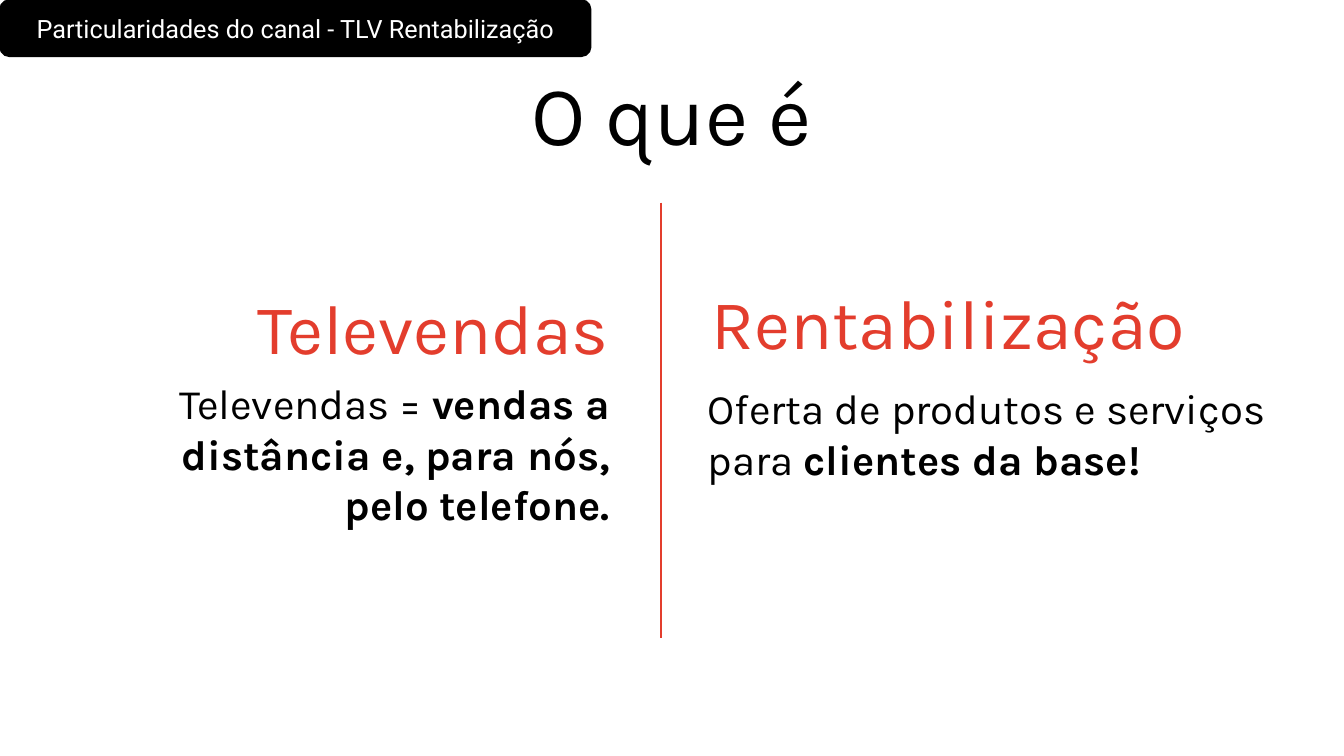
from lxml.etree import SubElement
from pptx import Presentation
from pptx.dml.color import RGBColor
from pptx.enum.shapes import MSO_CONNECTOR as Connector, MSO_SHAPE as Shape
from pptx.enum.text import MSO_ANCHOR as Anchor, MSO_AUTO_SIZE as AutoSize, PP_ALIGN as Align
from pptx.oxml.ns import qn
from pptx.util import Inches, Pt

WIDTH, HEIGHT = 13.33, 7.5
BLACK, WHITE, RED = "000000", "FFFFFF", "E33D2D"
TAG = "Particularidades do canal - TLV Rentabilização"
TITLE = "O que é"
DIVIDER = {"x": 6.56, "top": 2.01, "bottom": 6.33}
COLUMNS = [
    {"align": Align.RIGHT,
     "heading": ("Televendas", (0.95, 2.77, 5.19, 0.94)),
     "body": ([("Televendas = ", False),
               ("vendas a distância e, para nós, pelo telefone.", True)],
              (1.32, 3.7, 4.83, 1.62))},
    {"align": Align.LEFT,
     "heading": ("Rentabilização", (6.96, 2.72, 5.21, 0.94)),
     "body": ([("Oferta de produtos e serviços para ", False),
               ("clientes da base!", True)],
              (6.92, 3.75, 5.89, 1.11))},
]


def color(value):
    return RGBColor.from_string(value)


def write(shape, spans, size, tint, align, anchor=Anchor.TOP, font="Karla"):
    frame = shape.text_frame
    frame.word_wrap = True
    frame.auto_size = AutoSize.NONE
    frame.vertical_anchor = anchor
    para = frame.paragraphs[0]
    para.alignment = align
    for text, bold in spans:
        span = para.add_run()
        span.text = text
        span.font.name = font
        span.font.size = Pt(size)
        span.font.bold = bold
        span.font.color.rgb = color(tint)


def add_text(page, area, spans, size, tint, align):
    box = page.shapes.add_textbox(*map(Inches, area))
    write(box, spans, size, tint, align)


def add_title(page):
    title = page.shapes.title
    width = 5.21
    title.left, title.top = Inches((WIDTH - width) / 2), Inches(0.56)
    title.width, title.height = Inches(width), Inches(1.11)
    write(title, [(TITLE, False)], 60, BLACK, Align.CENTER)


def add_divider(page):
    x = Inches(DIVIDER["x"])
    line = page.shapes.add_connector(
        Connector.STRAIGHT, x, Inches(DIVIDER["top"]), x, Inches(DIVIDER["bottom"]))
    line.line.color.rgb = color(RED)
    line.line.width = Pt(1.5)
    SubElement(line._element.spPr, qn("a:effectLst"))


def add_tag(page):
    tag = page.shapes.add_shape(Shape.ROUNDED_RECTANGLE, 0, 0, Inches(5.86), Inches(0.56))
    tag.shadow.inherit = False
    tag.fill.solid()
    tag.fill.fore_color.rgb = color(BLACK)
    tag.line.color.rgb = color(BLACK)
    tag.line.width = Pt(1)
    write(tag, [(TAG, False)], 18, WHITE, Align.CENTER, Anchor.MIDDLE, "Roboto")


def main():
    """Build the two-column definition slide."""
    deck = Presentation()
    deck.slide_width, deck.slide_height = Inches(WIDTH), Inches(HEIGHT)
    page = deck.slides.add_slide(deck.slide_layouts[5])
    page.background.fill.solid()
    page.background.fill.fore_color.rgb = color(WHITE)
    add_title(page)
    for column in COLUMNS:
        heading, heading_area = column["heading"]
        spans, body_area = column["body"]
        add_text(page, heading_area, [(heading, False)], 50, RED, column["align"])
        add_text(page, body_area, spans, 30, BLACK, column["align"])
    add_divider(page)
    add_tag(page)
    deck.save("out.pptx")


if __name__ == "__main__":
    main()
